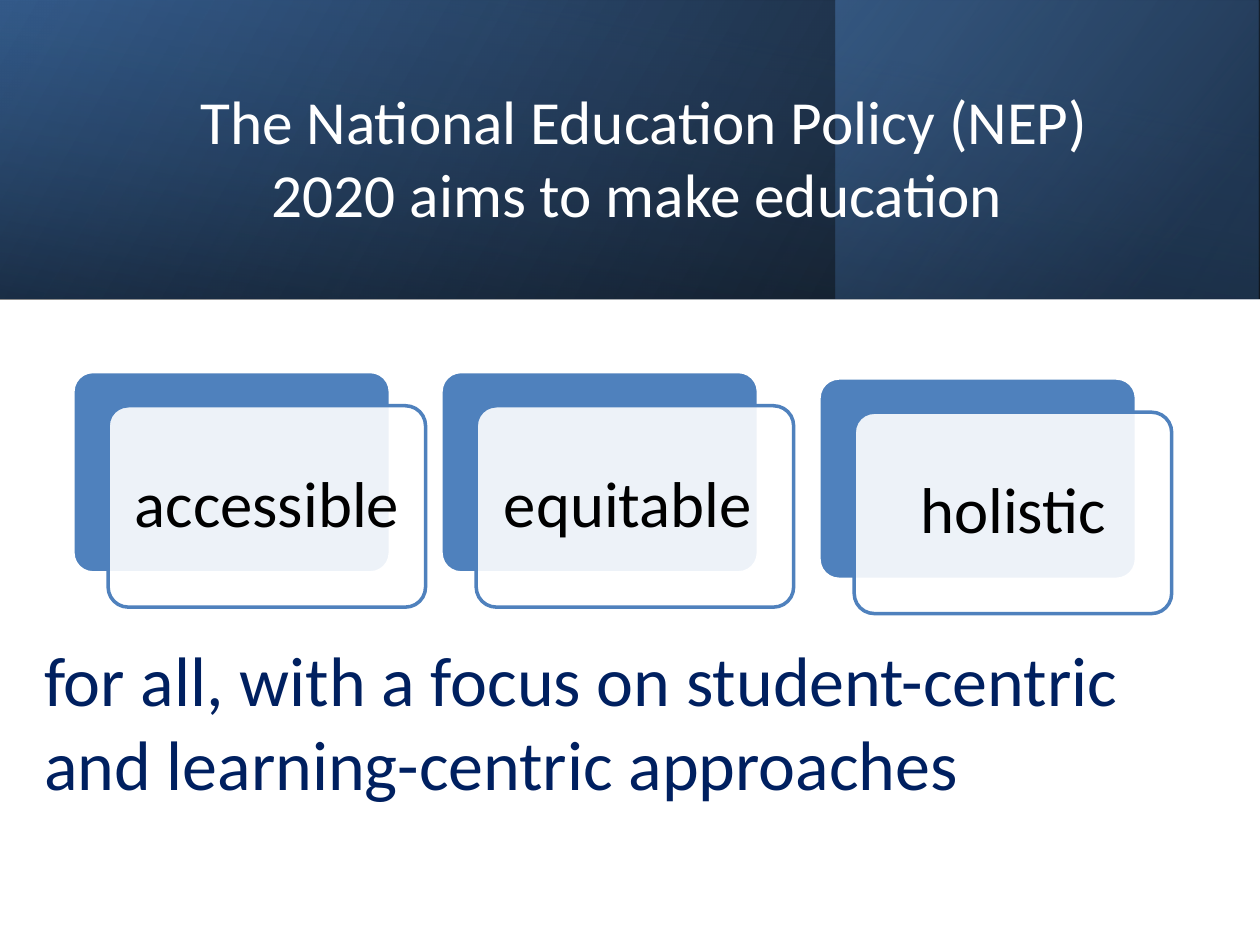
"""Build a slide on the aims of the National Education Policy 2020."""
from dataclasses import dataclass

from lxml.etree import SubElement
from pptx import Presentation
from pptx.dml.color import RGBColor
from pptx.enum.shapes import MSO_SHAPE
from pptx.enum.text import MSO_ANCHOR, PP_ALIGN
from pptx.oxml.ns import qn
from pptx.shapes.autoshape import Shape
from pptx.slide import Slide
from pptx.util import Cm, Pt

WHITE = RGBColor(0xFF, 0xFF, 0xFF)
BLACK = RGBColor(0x00, 0x00, 0x00)
BLUE = RGBColor(0x4F, 0x81, 0xBD)
DEEP_BLUE = RGBColor(0x37, 0x60, 0x92)
DARK_BLUE = RGBColor(0x25, 0x40, 0x61)
NAVY = RGBColor(0x00, 0x20, 0x60)
FONT = "Calibri"


@dataclass(frozen=True)
class Area:
    left: float
    top: float
    width: float
    height: float

    def lengths(self) -> tuple[Cm, Cm, Cm, Cm]:
        return Cm(self.left), Cm(self.top), Cm(self.width), Cm(self.height)


@dataclass(frozen=True)
class Stop:
    position: float
    color: RGBColor
    opacity: int


@dataclass(frozen=True)
class Band:
    area: Area
    stops: tuple[Stop, Stop]
    angle: int
    rotation: int = 0


@dataclass(frozen=True)
class Card:
    word: str
    left: float
    top: float


BANDS = (
    Band(Area(0, 0, 25.4, 6.02),
         (Stop(0, BLACK, 96), Stop(1, DEEP_BLUE, 100)), 30),
    Band(Area(16.84, 0, 8.53, 6.02),
         (Stop(0.19, DARK_BLUE, 68), Stop(1, BLUE, 48)), 40),
    Band(Area(9.68, -9.68, 6.02, 25.4),
         (Stop(0.23, DEEP_BLUE, 16), Stop(0.99, BLACK, 45)), 10, 270),
)
CARDS = (
    Card("accessible ", 1.47, 7.49),
    Card("equitable ", 8.89, 7.49),
    Card("holistic", 16.51, 7.62),
)


def set_opacity(shape: Shape, opacities: list[int]) -> None:
    colors = shape.element.spPr.iter(qn("a:srgbClr"))
    for color, opacity in zip(list(colors), opacities):
        if opacity < 100:
            SubElement(color, qn("a:alpha")).set("val", str(opacity * 1000))


def add_band(page: Slide, band: Band) -> None:
    shape = page.shapes.add_shape(MSO_SHAPE.RECTANGLE, *band.area.lengths())
    shape.shadow.inherit = False
    shape.rotation = band.rotation
    shape.element.spPr.find(qn("a:xfrm")).set("flipH", "1")
    shape.line.fill.background()
    shape.fill.gradient()
    shape.fill.gradient_angle = band.angle
    for target, stop in zip(shape.fill.gradient_stops, band.stops):
        target.position = stop.position
        target.color.rgb = stop.color
    set_opacity(shape, [stop.opacity for stop in band.stops])


def add_panel(page: Slide, area: Area, fill: RGBColor, line: RGBColor,
              opacity: int = 100) -> None:
    panel = page.shapes.add_shape(MSO_SHAPE.ROUNDED_RECTANGLE, *area.lengths())
    panel.shadow.inherit = False
    panel.adjustments[0] = 0.1
    panel.fill.solid()
    panel.fill.fore_color.rgb = fill
    set_opacity(panel, [opacity])
    panel.line.color.rgb = line
    panel.line.width = Pt(2)


def add_text(page: Slide, area: Area, text: str, size: int, color: RGBColor,
             align: PP_ALIGN = PP_ALIGN.CENTER,
             anchor: MSO_ANCHOR = MSO_ANCHOR.MIDDLE) -> Shape:
    box = page.shapes.add_textbox(*area.lengths())
    frame = box.text_frame
    frame.word_wrap = True
    frame.vertical_anchor = anchor
    para = frame.paragraphs[0]
    para.alignment = align
    span = para.add_run()
    span.text = text
    span.font.name = FONT
    span.font.size = Pt(size)
    span.font.color.rgb = color
    return box


def add_card(page: Slide, card: Card) -> None:
    add_panel(page, Area(card.left, card.top, 6.4, 4.06), BLUE, WHITE)
    add_panel(page, Area(card.left + 0.71, card.top + 0.69, 6.4, 4.06),
              WHITE, BLUE, 90)
    label = Area(card.left + 0.83, card.top + 0.8, 6.17, 3.84)
    frame = add_text(page, label, card.word, 37, BLACK).text_frame
    frame.margin_left = frame.margin_right = Cm(0.38)
    frame.margin_top = frame.margin_bottom = Cm(0.38)
    frame.paragraphs[0].line_spacing = 0.9


def main() -> None:
    deck = Presentation()
    deck.slide_width, deck.slide_height = Cm(25.4), Cm(19.05)
    page = deck.slides.add_slide(deck.slide_layouts[6])
    for band in BANDS:
        add_band(page, band)
    add_text(page, Area(2.87, 0.97, 20.24, 4.37),
             "The National Education Policy (NEP) 2020 aims to make education ",
             35, WHITE)
    for card in CARDS:
        add_card(page, card)
    add_text(page, Area(0.64, 12.7, 22.76, 3.68),
             "for all, with a focus on student-centric and learning-centric approaches",
             40, NAVY, PP_ALIGN.LEFT, MSO_ANCHOR.TOP)
    deck.save("out.pptx")


if __name__ == "__main__":
    main()
